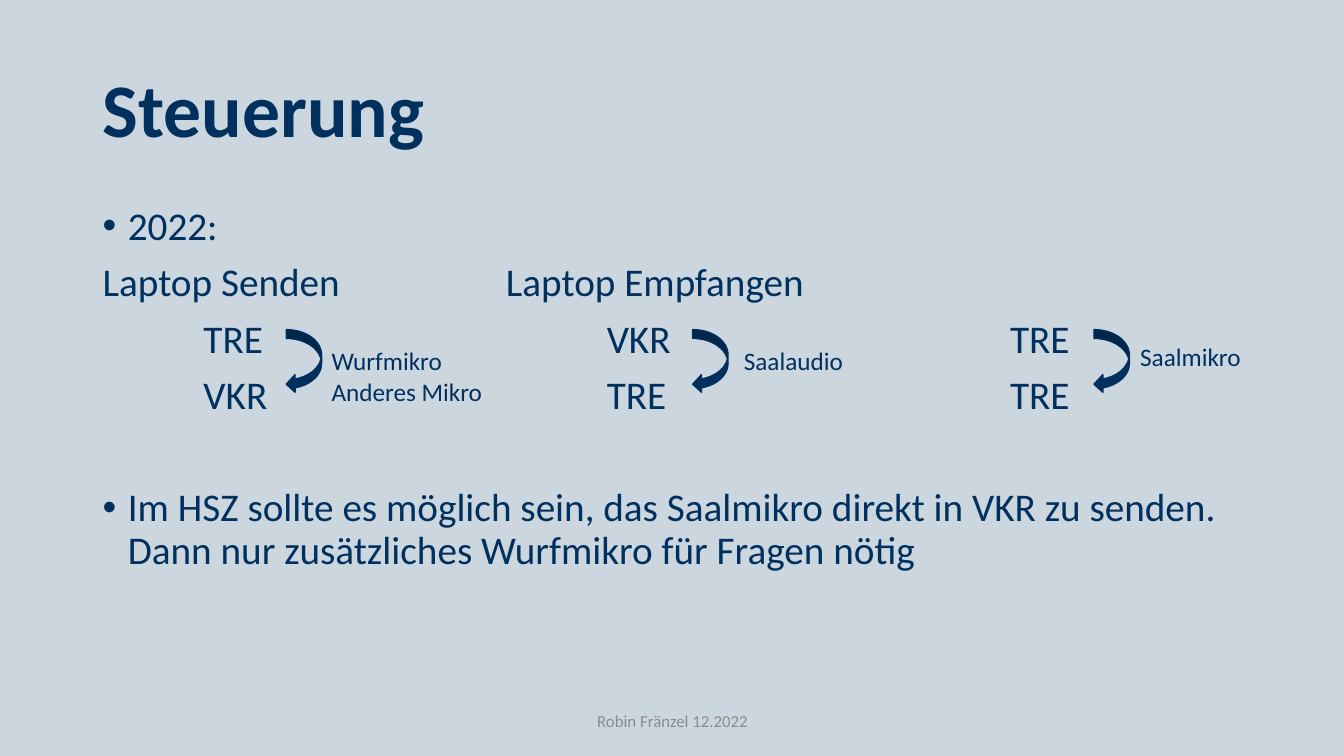
import dataclasses

import lxml.etree
import pptx
import pptx.dml.color
import pptx.enum.shapes
import pptx.enum.text
import pptx.oxml.ns
import pptx.util

Align = pptx.enum.text.PP_ALIGN
Anchor = pptx.enum.text.MSO_ANCHOR


@dataclasses.dataclass(frozen=True)
class Theme:
    font: str = "Calibri"
    background: str = "CCD6DF"
    navy: str = "00305D"
    grey: str = "8C8C8C"
    title: int = 54
    body: int = 28
    label: int = 18
    footer: int = 12


def color(code):
    return pptx.dml.color.RGBColor.from_string(code)


def add_child(parent, tag, **attributes):
    return lxml.etree.SubElement(parent, pptx.oxml.ns.qn(tag), attributes)


def write(para, text, font, size, ink, bold=False, align=Align.LEFT,
          line=1.0, before=0, bullet=False, tabs=()):
    """Fill a paragraph; tabs are stops in inches from the text edge."""
    para.alignment = align
    para.line_spacing = line
    para.space_before = pptx.util.Pt(before)
    properties = para._p.get_or_add_pPr()
    if bullet:
        indent = pptx.util.Inches(0.25)
        properties.set("marL", str(indent))
        properties.set("indent", str(-indent))
        add_child(properties, "a:buFont", typeface="Arial")
        add_child(properties, "a:buChar", char="•")
    if tabs:
        stops = add_child(properties, "a:tabLst")
        for stop in tabs:
            add_child(stops, "a:tab", pos=str(pptx.util.Inches(stop)), algn="l")
    span = para.add_run()
    span.text = text
    span.font.name = font
    span.font.size = pptx.util.Pt(size)
    span.font.bold = bold
    span.font.color.rgb = color(ink)


class Page:
    """One slide; all positions and sizes are percentages of its size."""

    def __init__(self, deck, theme):
        self.deck, self.theme = deck, theme
        self.slide = deck.slides.add_slide(deck.slide_layouts[6])
        fill = self.slide.background.fill
        fill.solid()
        fill.fore_color.rgb = color(theme.background)

    def area(self, left, top, width, height):
        across, down = self.deck.slide_width / 100, self.deck.slide_height / 100
        return (round(left * across), round(top * down),
                round(width * across), round(height * down))

    def text(self, area, paragraphs, size, ink=None, anchor=Anchor.TOP,
             wrap=True, **style):
        """Each paragraph is a pair of its text and its own format."""
        box = self.slide.shapes.add_textbox(*self.area(*area))
        frame = box.text_frame
        frame.word_wrap = wrap
        frame.vertical_anchor = anchor
        if not wrap:
            frame.auto_size = pptx.enum.text.MSO_AUTO_SIZE.SHAPE_TO_FIT_TEXT
        for number, (words, own) in enumerate(paragraphs):
            para = frame.add_paragraph() if number else frame.paragraphs[0]
            write(para, words, self.theme.font, size, ink or self.theme.navy,
                  **{**style, **own})

    def arrow(self, area):
        kind = pptx.enum.shapes.MSO_SHAPE.CURVED_LEFT_ARROW
        shape = self.slide.shapes.add_shape(kind, *self.area(*area))
        shape.shadow.inherit = False
        shape.fill.solid()
        shape.fill.fore_color.rgb = color(self.theme.navy)
        shape.line.color.rgb = color(self.theme.navy)
        shape.line.width = pptx.util.Pt(1)


def main():
    deck = pptx.Presentation()
    deck.slide_width = pptx.util.Inches(13.33)
    deck.slide_height = pptx.util.Inches(7.5)
    theme = Theme()
    page = Page(deck, theme)

    # Title
    page.text((6.9, 5.33, 86.25, 19.33), [("Steuerung", {})], theme.title,
              anchor=Anchor.MIDDLE, bold=True, line=0.9)

    # Body: tab stops set the three columns of signal routes
    routes = {"tabs": (1, 5, 9)}
    page.text((6.9, 26.67, 86.25, 63.47), [
        ("2022:", {"bullet": True}),
        ("Laptop Senden\tLaptop Empfangen", {"tabs": (4,)}),
        ("\tTRE\tVKR\tTRE", routes),
        ("\tVKR\tTRE\tTRE", routes),
        ("Im HSZ sollte es möglich sein, das Saalmikro direkt in VKR zu senden. "
         "Dann nur zusätzliches Wurfmikro für Fragen nötig",
         {"bullet": True, "before": 50}),
    ], theme.body, line=0.9, before=10)

    # Footer
    page.text((33.16, 92.67, 33.76, 5.33), [("Robin Fränzel 12.2022", {})],
              theme.footer, theme.grey, Anchor.MIDDLE, align=Align.CENTER)

    # Arrows with their labels: arrow left, label left, top, width, lines
    signals = [
        (21.3, 23.93, 45.07, 14.25, ["Wurfmikro", "Anderes Mikro"]),
        (51.54, 54.61, 45.07, 10.13, ["Saalaudio"]),
        (81.4, 84.1, 44.53, 10.2, ["Saalmikro"]),
    ]
    for arrow_left, label_left, top, width, lines in signals:
        page.arrow((arrow_left, 43.6, 2.63, 8.4))
        height = 1.33 + 4 * len(lines)
        page.text((label_left, top, width, height),
                  [(words, {}) for words in lines], theme.label, wrap=False)

    deck.save("out.pptx")


if __name__ == "__main__":
    main()
